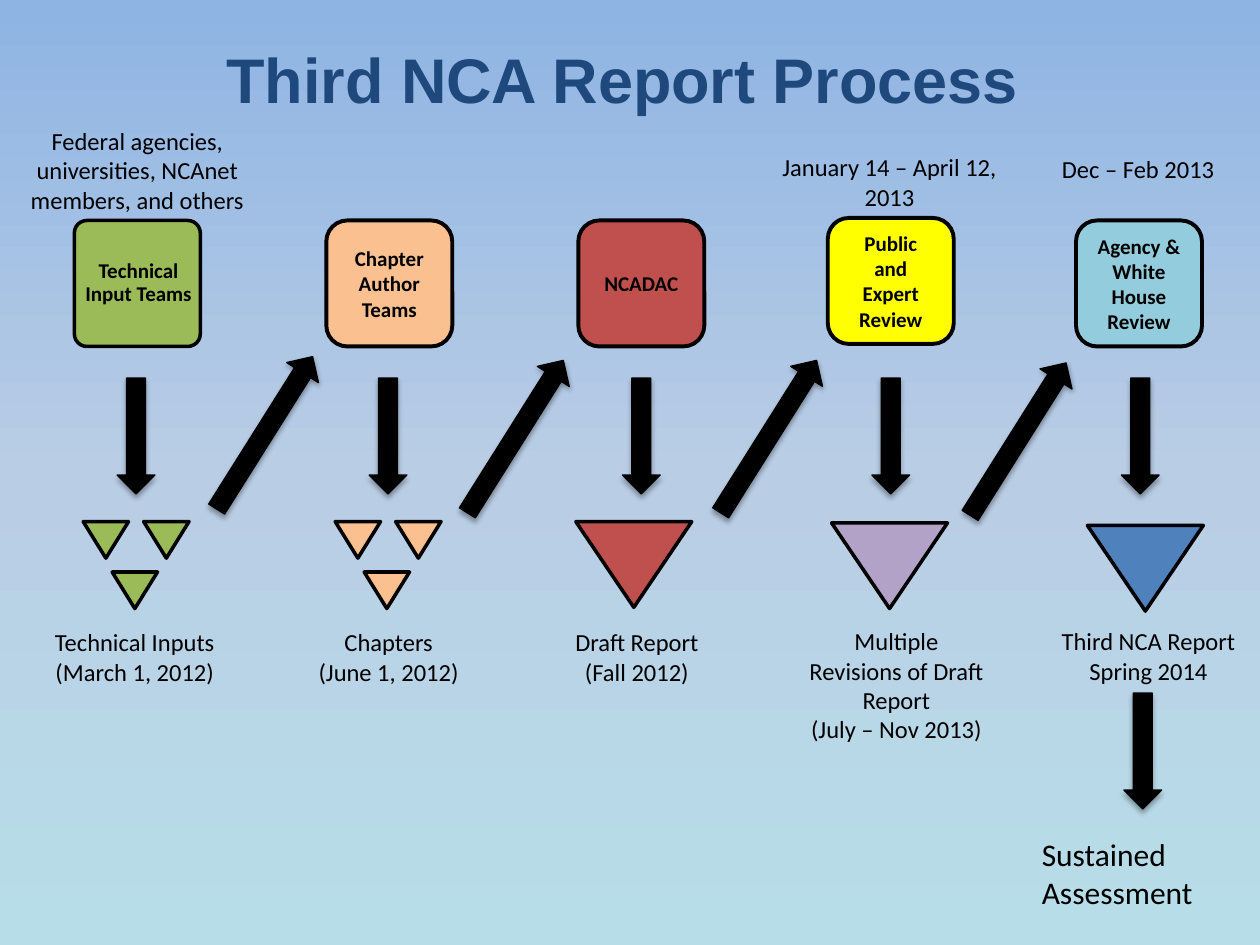
"""Build the Third NCA Report Process slide."""
from copy import deepcopy

from lxml import etree
from pptx import Presentation
from pptx.dml.color import RGBColor
from pptx.enum.shapes import MSO_SHAPE
from pptx.enum.text import MSO_ANCHOR, PP_ALIGN
from pptx.oxml.ns import qn
from pptx.util import Emu, Pt

EMU_PER_PX = 9144
BOX = MSO_SHAPE.ROUNDED_RECTANGLE
TRIANGLE = MSO_SHAPE.ISOSCELES_TRIANGLE
ARROW = MSO_SHAPE.DOWN_ARROW
LEFT, CENTER = PP_ALIGN.LEFT, PP_ALIGN.CENTER
TOP, MIDDLE = MSO_ANCHOR.TOP, MSO_ANCHOR.MIDDLE

COLORS = {
    "sky": "8EB4E3", "haze": "B9CDE5", "water": "B7DEE8",
    "navy": "1F497D", "black": "000000", "green": "9BBB59",
    "peach": "FAC090", "red": "C0504D", "yellow": "FFFF00",
    "aqua": "93CDDD", "purple": "B3A2C7", "blue": "4F81BD",
}


def px(length):
    return Emu(length * EMU_PER_PX)


def rgb(name):
    return RGBColor.from_string(COLORS[name])


def write(frame, text, size=14, color="black", font="Calibri", bold=False,
          align=CENTER, anchor=TOP, wrap=True, spacing=None):
    frame.word_wrap = wrap
    frame.vertical_anchor = anchor
    for index, line in enumerate(text.split("\n")):
        paragraph = frame.add_paragraph() if index else frame.paragraphs[0]
        paragraph.alignment = align
        paragraph.line_spacing = spacing
        run = paragraph.add_run()
        run.text = line
        run.font.size = Pt(size)
        run.font.name = font
        run.font.bold = bold
        run.font.color.rgb = rgb(color)


class ProcessSlide:
    def __init__(self, deck):
        self.slide = deck.slides.add_slide(deck.slide_layouts[5])

    def background(self, *names):
        fill = self.slide.background.fill
        fill.gradient()
        fill.gradient_angle = 270
        stop_list = next(self.slide.element.iter(qn("a:gsLst")))
        stop_list.insert(1, deepcopy(stop_list[0]))
        for index, (stop, name) in enumerate(zip(fill.gradient_stops, names)):
            stop.color.rgb = rgb(name)
            stop.position = index / (len(names) - 1)

    def title(self, text, *bounds):
        heading = self.slide.shapes.title
        heading.left, heading.top, heading.width, heading.height = map(px, bounds)
        write(heading.text_frame, text, size=36, color="navy", font="Arial",
              bold=True, anchor=MIDDLE)

    def shape(self, kind, bounds, color, line=2.0, rotation=0):
        figure = self.slide.shapes.add_shape(kind, *map(px, bounds))
        figure.shadow.inherit = False
        figure.fill.solid()
        figure.fill.fore_color.rgb = rgb(color)
        figure.line.color.rgb = rgb("black")
        figure.line.width = Pt(line)
        figure.rotation = rotation
        return figure

    def box(self, left, top, color, text):
        figure = self.shape(BOX, (left, top, 100, 100), color, 2.25)
        write(figure.text_frame, text, size=12, bold=True, anchor=MIDDLE)

    def tight_box(self, left, top, color, text):
        self.shape(BOX, (left, top, 100, 100), color).adjustments[0] = 0.1
        frame = self.label(text, left + 2, top, 98, 100, size=12, bold=True,
                           anchor=MIDDLE, spacing=0.9)
        frame.margin_left = frame.margin_right = px(5)
        frame.margin_top = frame.margin_bottom = px(1)

    def triangle(self, left, top, color, width=92, height=68):
        self.shape(TRIANGLE, (left, top, width, height), color, rotation=180)

    def triangle_trio(self, left, top, color):
        for across, down in ((0, 0), (48, 0), (23, 40)):
            self.triangle(left + across, top + down, color, 36, 29)

    def arrow(self, left, top, height=92, rotation=0.0):
        figure = self.shape(ARROW, (left, top, 30, height), "black", 0.75, rotation)
        effects = figure.element.spPr.find(qn("a:effectLst"))
        shadow = etree.SubElement(
            effects, qn("a:outerShdw"), blurRad=str(Pt(3.1)), dist=str(Pt(1.8)),
            dir="5400000", rotWithShape="0")
        tint = etree.SubElement(shadow, qn("a:srgbClr"), val=COLORS["black"])
        etree.SubElement(tint, qn("a:alpha"), val="35000")

    def label(self, text, left, top, width, height, **style):
        frame = self.slide.shapes.add_textbox(
            *map(px, (left, top, width, height))).text_frame
        write(frame, text, **style)
        return frame


def main():
    deck = Presentation()
    deck.slide_width, deck.slide_height = px(1000), px(750)
    process = ProcessSlide(deck)
    process.background("sky", "haze", "water")
    process.title("Third NCA Report Process", 44, 0, 900, 125)

    process.tight_box(59, 175, "green", "Technical Input Teams")
    for left, top, color, team in (
            (259, 175, "peach", "Chapter Author Teams"),
            (459, 175, "red", "NCADAC"),
            (657, 173, "yellow", "Public and Expert Review"),
            (854, 175, "aqua", "Agency & White House Review")):
        process.box(left, top, color, team)

    for left, color in ((66, "green"), (266, "peach")):
        process.triangle_trio(left, 414, color)
    for left, top, color in ((457, 414, "red"), (660, 415, "purple"),
                             (863, 417, "blue")):
        process.triangle(left, top, color)

    for left in (93, 293, 494, 692, 890):
        process.arrow(left, 300)
    for left, top in ((195, 272), (394, 275), (595, 275), (793, 277)):
        process.arrow(left, top, height=143, rotation=212.2)
    process.arrow(892, 550)

    for product, left, top, width in (
            ("Technical Inputs\n(March 1, 2012)", 33, 493, 148),
            ("Chapters\n(June 1, 2012)", 242, 493, 133),
            ("Draft Report\n(Fall 2012)", 446, 493, 119),
            ("Third NCA Report\nSpring 2014", 832, 492, 159)):
        process.label(product, left, top, width, 57, wrap=False)
    process.label("Multiple Revisions of Draft Report\n(July – Nov 2013)",
                  631, 492, 161, 104)

    process.label("Federal agencies, universities, NCAnet members, and others",
                  9, 95, 200, 81)
    process.label("January 14 – April 12, 2013", 606, 116, 200, 57)
    process.label("Dec – Feb 2013", 833, 117, 150, 34, align=LEFT)
    process.label("Sustained\nAssessment", 817, 658, 180, 71, size=18, align=LEFT)
    deck.save("out.pptx")


if __name__ == "__main__":
    main()
